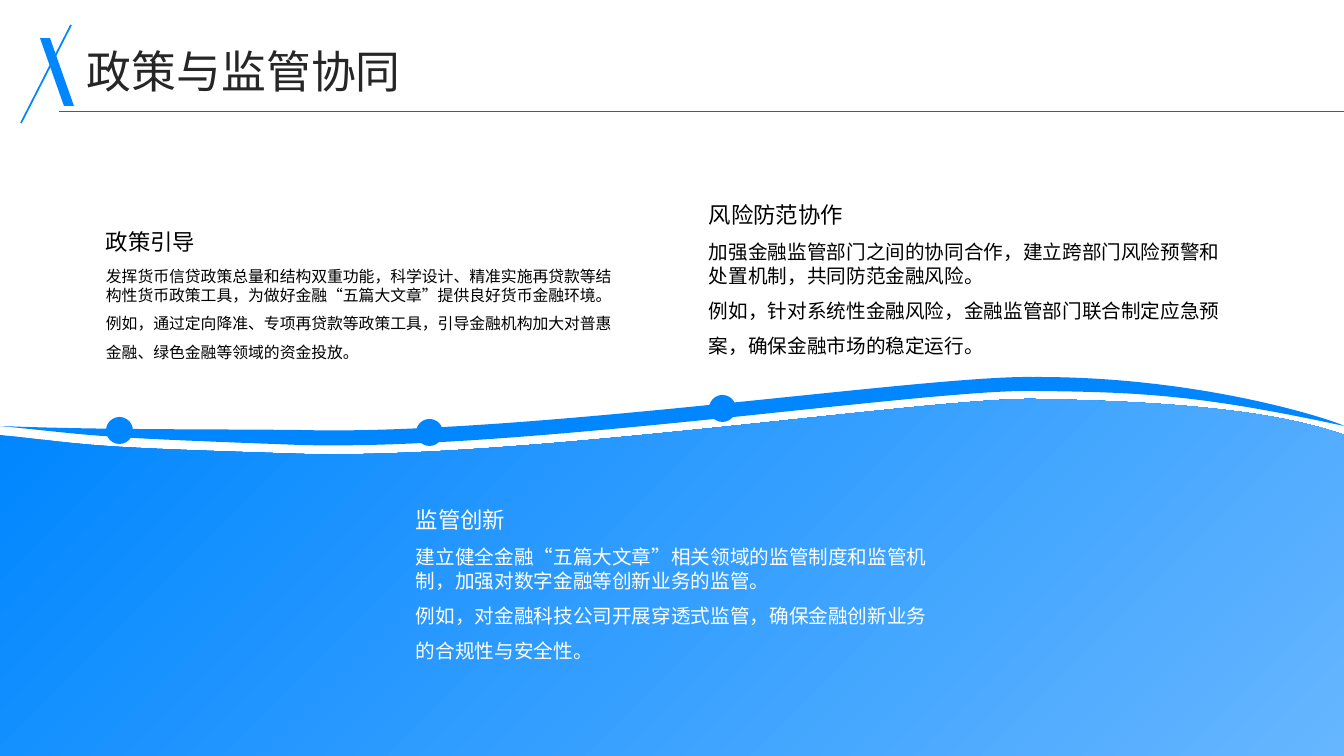
from pptx import Presentation
from pptx.dml.color import RGBColor
from pptx.enum.shapes import MSO_CONNECTOR, MSO_SHAPE
from pptx.enum.text import MSO_ANCHOR, PP_ALIGN
from pptx.oxml.ns import qn
from pptx.util import Pt
from lxml.etree import SubElement

FONT = "Noto Sans CJK SC"
BLUE, BLACK, WHITE = "0086FF", "000000", "FFFFFF"


def px(*nums):
    return [round(n * 12192000 / 1344) for n in nums]


def hue(code):
    return RGBColor.from_string(code)


deck = Presentation()
deck.slide_width, deck.slide_height = px(1344, 756)
slide = deck.slides.add_slide(deck.slide_layouts[5])
shapes = slide.shapes

# Waves: two numbers make a straight side, six make a curve
hill = [(1033, 399), (1141, 401, 1266, 407, 1344, 435), (1344, 756), (0, 756),
        (0, 435), (101, 446, 82, 447, 301, 454), (520, 460, 926, 398, 1033, 399)]
band = [(1033, 377), (1208, 376, 1344, 424, 1344, 426),
        (1201, 395, 1141, 392, 1033, 391), (926, 389, 520, 451, 301, 445),
        (82, 437, 101, 436, 0, 426), (101, 430, 201, 429, 301, 430),
        (520, 436, 926, 375, 1033, 377)]
waves = []
for parts in (hill, band):
    pen = shapes.build_freeform(*px(*parts[0]))
    pen.add_line_segments([px(*part[-2:]) for part in parts[1:]], close=True)
    wave = pen.convert_to_shape()
    for node, part in zip(list(wave._element.iter(qn("a:lnTo"))), parts[1:]):
        if len(part) == 6:
            curve = SubElement(node.getparent(), qn("a:cubicBezTo"))
            for i in (0, 2, 4):
                x, y = px(*part[i:i + 2])
                point = SubElement(curve, qn("a:pt"))
                point.set("x", str(x - wave.left))
                point.set("y", str(y - wave.top))
            node.getparent().replace(node, curve)
    wave.shadow.inherit = False
    wave.line.fill.background()
    waves.append(wave)

fill = waves[0].fill
fill.gradient()
fill.gradient_angle = 315
for stop, spot, code in zip(fill.gradient_stops, (0.01, 1), (BLUE, "66B6FF")):
    stop.position = spot
    stop.color.rgb = hue(code)
waves[1].fill.solid()
waves[1].fill.fore_color.rgb = hue(BLUE)

# Text: box, paragraphs, line spacing, size, colour, anchor
topics = [
    (106, 190, BLACK, 11.25, "政策引导",
     ["发挥货币信贷政策总量和结构双重功能，科学设计、精准实施再贷款等结构性货币政策工具，为做好金融“五篇大文章”提供良好货币金融环境。",
      "例如，通过定向降准、专项再贷款等政策工具，引导金融机构加大对普惠金融、绿色金融等领域的资金投放。"]),
    (709, 163, BLACK, 14, "风险防范协作",
     ["加强金融监管部门之间的协同合作，建立跨部门风险预警和处置机制，共同防范金融风险。",
      "例如，针对系统性金融风险，金融监管部门联合制定应急预案，确保金融市场的稳定运行。"]),
    (416, 468, WHITE, 14, "监管创新",
     ["建立健全金融“五篇大文章”相关领域的监管制度和监管机制，加强对数字金融等创新业务的监管。",
      "例如，对金融科技公司开展穿透式监管，确保金融创新业务的合规性与安全性。"]),
]
title = shapes.title
title.left, title.top, title.width, title.height = px(87, 44, 1183, 47)
texts = [(title, ["政策与监管协同"], [1.1], 32, "262626", MSO_ANCHOR.MIDDLE)]
for x, y, code, size, head, lines in topics:
    box = shapes.add_textbox(*px(x, y, 512, 65))
    texts.append((box, [head], [1.3], 16, code, MSO_ANCHOR.BOTTOM))
    box = shapes.add_textbox(*px(x, y + 77, 512, 127))
    texts.append((box, lines, [1.0, 1.5], size, code, MSO_ANCHOR.TOP))

for box, lines, gaps, size, code, anchor in texts:
    frame = box.text_frame
    frame.text = "\n".join(lines)
    frame.word_wrap = True
    frame.vertical_anchor = anchor
    frame.margin_left = frame.margin_right = 0
    frame.margin_top = frame.margin_bottom = 0
    for para, gap in zip(frame.paragraphs, gaps):
        para.alignment = PP_ALIGN.LEFT
        para.line_spacing = gap
        para.space_before = Pt(0)
        for run in para.runs:
            run.font.size = Pt(size)
            run.font.name = FONT
            run.font.color.rgb = hue(code)
            east = SubElement(run.font._element, qn("a:ea"))
            east.set("typeface", FONT)

# Dots on the band, each with a small core, and the slanted title bar
marks = []
for x, y in ((709, 395), (416, 419), (106, 417)):
    for inset, side in ((0, 27), (10, 8)):
        marks.append(shapes.add_shape(
            MSO_SHAPE.OVAL, *px(x + inset, y + inset, side, side)))
bar = shapes.add_shape(MSO_SHAPE.PARALLELOGRAM, *px(40, 38, 34, 68))
bar.adjustments[0] = 0.705
bar._element.spPr.xfrm.set("flipH", "1")
for mark in marks + [bar]:
    mark.shadow.inherit = False
    mark.fill.solid()
    mark.fill.fore_color.rgb = hue(BLUE)
    mark.line.fill.background()

# Title lines
for ends, code, width in (((71, 25, 21, 123), BLUE, 1.25),
                          ((59, 111, 1344, 111), "595959", 0.5)):
    line = shapes.add_connector(MSO_CONNECTOR.STRAIGHT, *px(*ends))
    line.line.color.rgb = hue(code)
    line.line.width = Pt(width)
    SubElement(line._element.spPr, qn("a:effectLst"))

deck.save("out.pptx")
